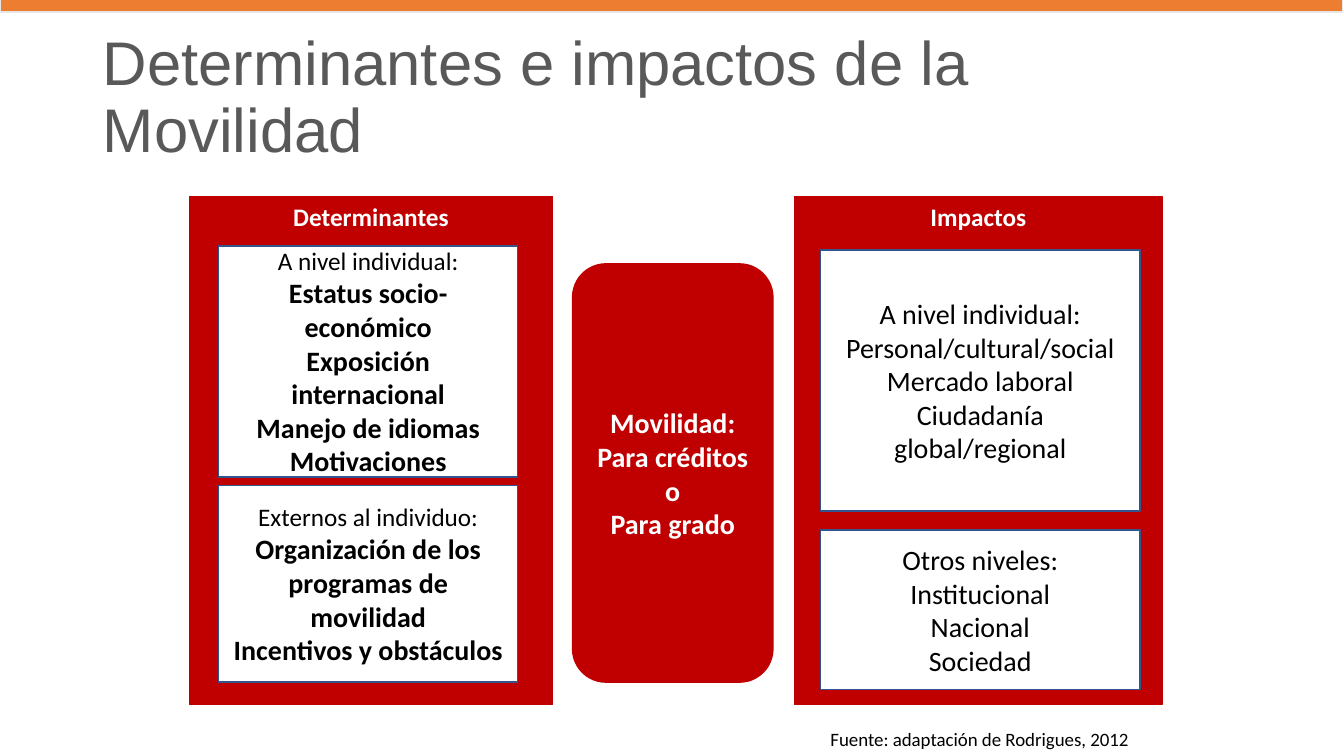
from pptx import Presentation
from pptx.dml.color import RGBColor
from pptx.enum.shapes import MSO_SHAPE
from pptx.enum.text import MSO_ANCHOR, PP_ALIGN
from pptx.util import Cm, Pt

RED = "C00000"
WHITE = "FFFFFF"
BLACK = "000000"
BLUE = "325491"
GREY = "595959"
ORANGE = "ED7D31"
PALE = "E7E6E6"

PANEL_TOP, PANEL_HEIGHT = 4.95, 12.8
DETERMINANTS_LEFT, DETERMINANTS_WIDTH = 5.51, 7.54
IMPACTS_LEFT, IMPACTS_WIDTH = 20.68, 8.05


def color(hex_string):
    return RGBColor.from_string(hex_string)


def write_lines(frame, lines, ink, align, anchor, font="Calibri"):
    """Fill a frame with one paragraph per (text, size, bold) line."""
    frame.word_wrap = True
    frame.vertical_anchor = anchor
    for index, (text, size, bold) in enumerate(lines):
        paragraph = frame.paragraphs[0] if index == 0 else frame.add_paragraph()
        paragraph.alignment = align
        run = paragraph.add_run()
        run.text = text
        run.font.name = font
        run.font.size = Pt(size)
        run.font.bold = bold
        run.font.color.rgb = color(ink)


def add_block(slide, box, fill, outline, lines=(), ink=WHITE,
              anchor=MSO_ANCHOR.MIDDLE, outer=MSO_SHAPE.RECTANGLE):
    block = slide.shapes.add_shape(outer, *map(Cm, box))
    block.shadow.inherit = False
    block.fill.solid()
    block.fill.fore_color.rgb = color(fill)
    block.line.color.rgb = color(outline)
    block.line.width = Pt(1)
    write_lines(block.text_frame, lines, ink, PP_ALIGN.CENTER, anchor)


def add_panel(slide, left, width, heading):
    add_block(slide, (left, PANEL_TOP, width, PANEL_HEIGHT), RED, RED,
              [(heading, 18, True)], anchor=MSO_ANCHOR.TOP)


def add_card(slide, box, heading, heading_size, items, bold):
    lines = [(heading, heading_size, False)]
    lines += [(item, 20, bold) for item in items]
    add_block(slide, box, WHITE, BLUE, lines, BLACK)


def add_label(slide, box, line, ink, anchor, font="Calibri"):
    label = slide.shapes.add_textbox(*map(Cm, box))
    write_lines(label.text_frame, [line], ink, PP_ALIGN.LEFT, anchor, font)
    return label


def main():
    presentation = Presentation()
    presentation.slide_width = Cm(33.87)
    presentation.slide_height = Cm(19.05)
    slide = presentation.slides.add_slide(presentation.slide_layouts[6])

    add_block(slide, (0, -0.08, 33.83, 0.38), ORANGE, PALE)
    title = add_label(slide, (2.34, 0.66, 28.5, 3.68),
                      ("Determinantes e impactos de la Movilidad", 44, False),
                      GREY, MSO_ANCHOR.MIDDLE, "Arial")
    title.text_frame.paragraphs[0].line_spacing = 0.9

    add_panel(slide, 4.78, 9.14, "Determinantes")
    add_card(slide, (DETERMINANTS_LEFT, 6.2, DETERMINANTS_WIDTH, 5.82),
             "A nivel individual:", 18,
             ["Estatus socio-económico", "Exposición internacional",
              "Manejo de idiomas", "Motivaciones"], True)
    add_card(slide, (DETERMINANTS_LEFT, 12.24, DETERMINANTS_WIDTH, 4.95),
             "Externos al individuo:", 18,
             ["Organización de los programas de movilidad",
              "Incentivos y obstáculos"], True)

    mobility = ["Movilidad:", "Para créditos", "o", "Para grado"]
    add_block(slide, (14.43, 6.65, 5.05, 10.54), RED, RED,
              [(text, 20, True) for text in mobility],
              outer=MSO_SHAPE.ROUNDED_RECTANGLE)

    add_panel(slide, 20.02, 9.27, "Impactos")
    add_card(slide, (IMPACTS_LEFT, 6.3, IMPACTS_WIDTH, 6.58),
             "A nivel individual:", 20,
             ["Personal/cultural/social", "Mercado laboral",
              "Ciudadanía global/regional"], False)
    add_card(slide, (IMPACTS_LEFT, 13.36, IMPACTS_WIDTH, 4.01),
             "Otros niveles:", 20,
             ["Institucional", "Nacional", "Sociedad"], False)

    add_label(slide, (IMPACTS_LEFT, 18.21, 8.46, 0.84),
              ("Fuente: adaptación de Rodrigues, 2012", 13.5, False),
              BLACK, MSO_ANCHOR.TOP)
    presentation.save("out.pptx")


if __name__ == "__main__":
    main()
